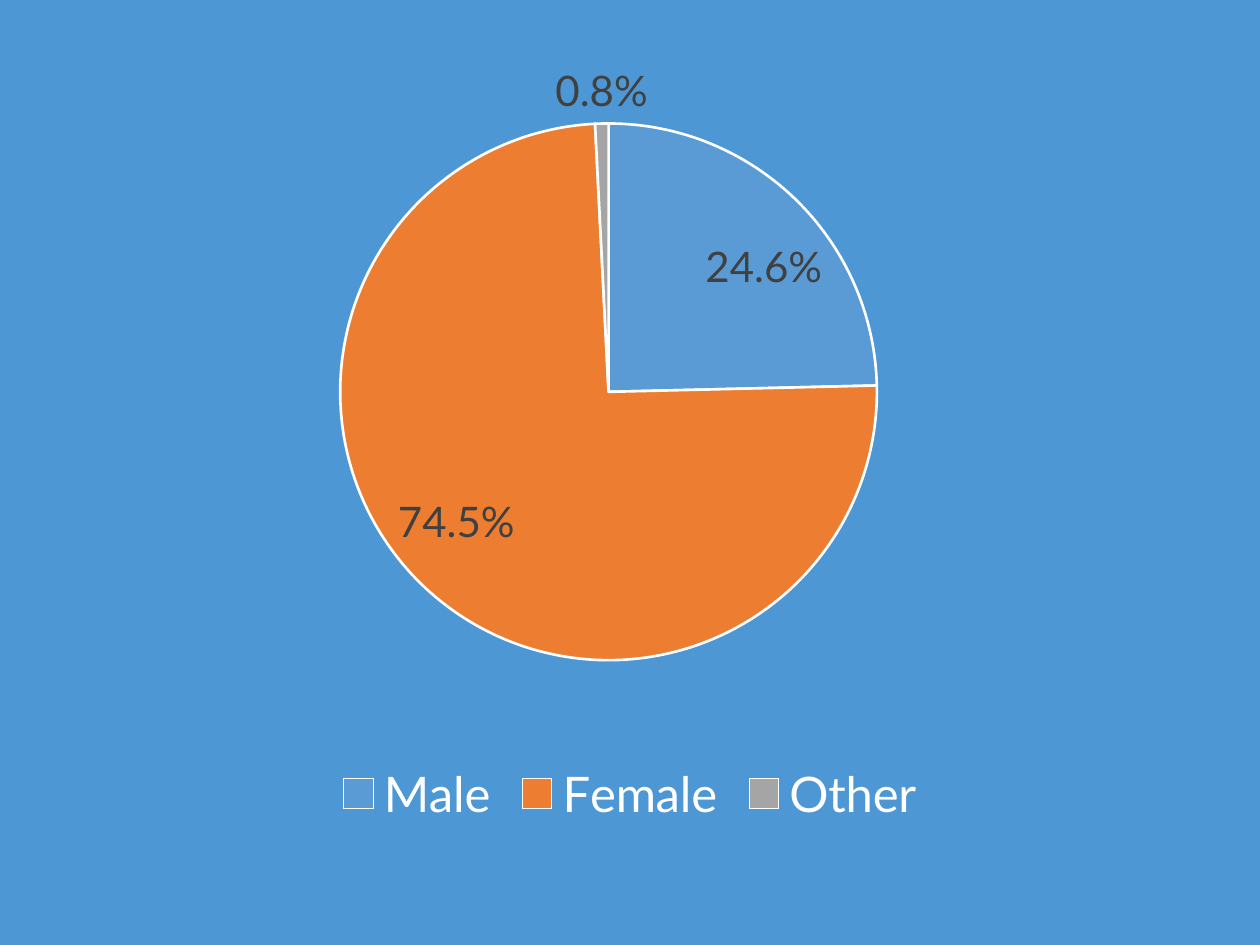
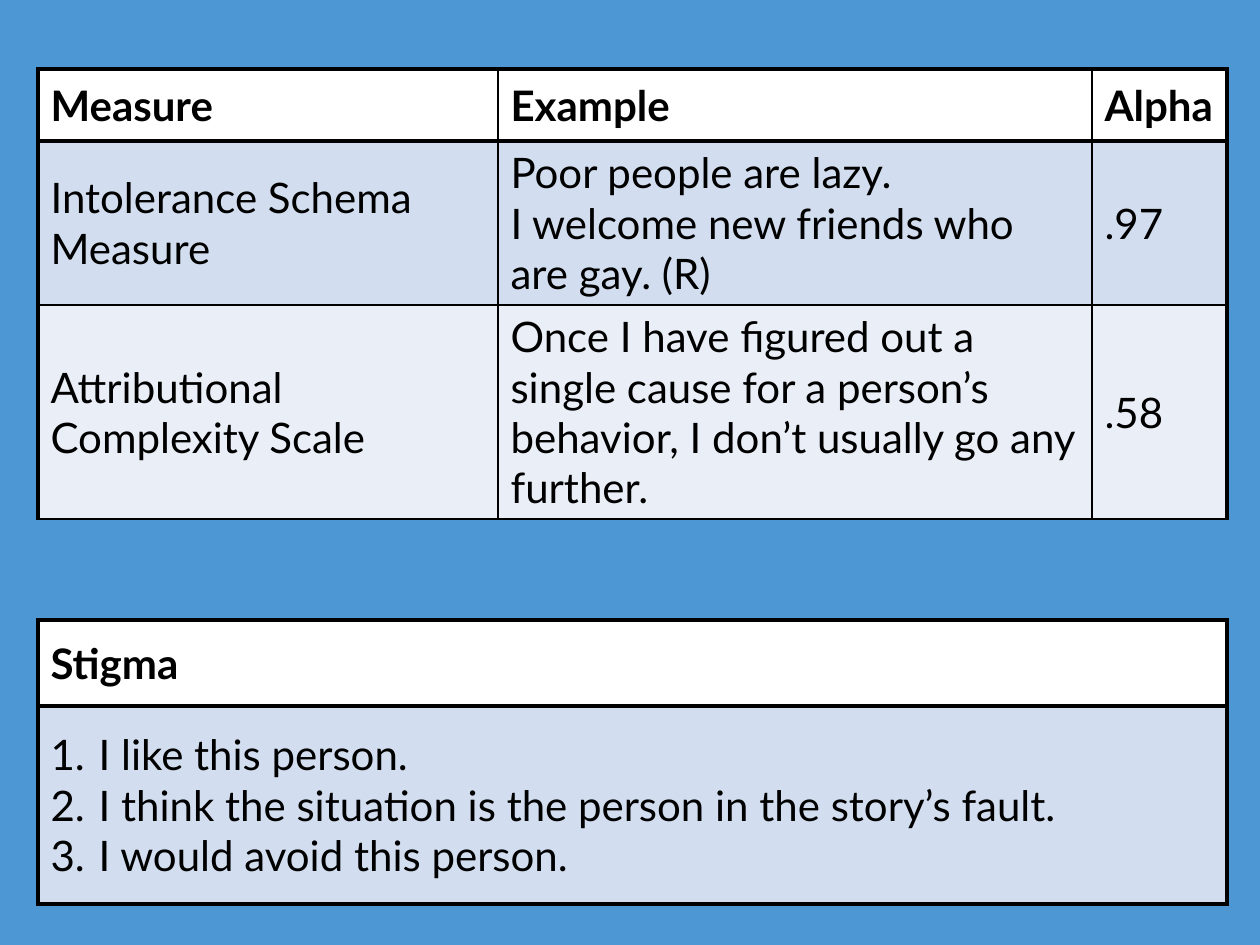
import lxml.etree
import pptx
import pptx.chart.data
import pptx.dml.color
import pptx.enum.chart
import pptx.enum.text
import pptx.oxml.ns
import pptx.util

PX = 914400 / 126
FONT = "Lato"
COLOURS = {
    "background": "4E97D5",
    "white": "FFFFFF",
    "black": "000000",
    "label": "404040",
    "male": "5B9BD5",
    "female": "ED7D31",
    "other": "A5A5A5",
    "band": "D2DEEF",
    "light band": "EAEFF7",
}
THICK, THIN = 2.25, 1


def px(length):
    return pptx.util.Emu(round(length * PX))


def style_font(font, size, colour, bold=False):
    font.name = FONT
    font.size = pptx.util.Pt(size)
    font.bold = bold
    font.color.rgb = pptx.dml.color.RGBColor.from_string(COLOURS[colour])


presentation = pptx.Presentation()
presentation.slide_width, presentation.slide_height = px(1260), px(945)
background = presentation.slide_master.background.fill
background.solid()
background.fore_color.rgb = pptx.dml.color.RGBColor.from_string(COLOURS["background"])
blank = presentation.slide_layouts[6]

gender_slide = presentation.slides.add_slide(blank)
genders = pptx.chart.data.CategoryChartData(number_format='0.0"%"')
genders.categories = ["Male", "Female", "Other"]
genders.add_series("Series 1", [24.6, 74.5, 0.8])
gender_pie = gender_slide.shapes.add_chart(
    pptx.enum.chart.XL_CHART_TYPE.PIE, 0, 0, px(1260), px(833), genders
).chart
gender_pie.has_title = False
style_font(gender_pie.font, 10, "black")

gender_pie.has_legend = True
gender_pie.legend.position = pptx.enum.chart.XL_LEGEND_POSITION.BOTTOM
gender_pie.legend.include_in_layout = False
style_font(gender_pie.legend.font, 28, "white")

pie_plot = gender_pie.plots[0]
pie_plot.vary_by_categories = True
for index, gender in enumerate(["male", "female", "other"]):
    wedge = pie_plot.series[0].points[index].format
    wedge.fill.solid()
    wedge.fill.fore_color.rgb = pptx.dml.color.RGBColor.from_string(COLOURS[gender])
    wedge.line.width = pptx.util.Pt(1.5)
    wedge.line.color.rgb = pptx.dml.color.RGBColor.from_string(COLOURS["white"])

pie_plot.has_data_labels = True
shares = pie_plot.data_labels
shares.show_value = True
shares.show_percentage = False
shares.number_format = '0.0"%"'
shares.number_format_is_linked = False
shares.position = pptx.enum.chart.XL_LABEL_POSITION.BEST_FIT
style_font(shares.font, 24, "label")

plot_area = gender_pie._chartSpace.chart.plotArea
for old_layout in plot_area.findall(pptx.oxml.ns.qn("c:layout")):
    plot_area.remove(old_layout)
layout = lxml.etree.Element(pptx.oxml.ns.qn("c:layout"))
plot_area.insert(0, layout)
manual = lxml.etree.SubElement(layout, pptx.oxml.ns.qn("c:manualLayout"))
for tag, value in [
    ("layoutTarget", "inner"), ("xMode", "edge"), ("yMode", "edge"),
    ("x", "0.27"), ("y", "0.085"), ("w", "0.426"), ("h", "0.771"),
]:
    lxml.etree.SubElement(manual, pptx.oxml.ns.qn(f"c:{tag}"), val=value)

measures_slide = presentation.slides.add_slide(blank)
measures = {
    "top": 69,
    "widths": [460, 594, 135],
    "heights": [72, 164, 214],
    "uprights": [THICK, THIN, THIN, THICK],
    "rules": [THICK, THICK, THIN, THIN],
    "numbered": False,
    "rows": [
        ["Measure", "Example", "Alpha"],
        [
            "Intolerance Schema Measure",
            "Poor people are lazy.\nI welcome new friends who are gay. (R)",
            ".97",
        ],
        [
            "Attributional Complexity Scale",
            "Once I have figured out a single cause for a person’s behavior, "
            "I don’t usually go any further.",
            ".58",
        ],
    ],
}
stigma = {
    "top": 620,
    "widths": [1189],
    "heights": [86, 198],
    "uprights": [THICK, THICK],
    "rules": [THICK, THICK, THICK],
    "numbered": True,
    "rows": [
        ["Stigma"],
        [
            "I like this person.\n"
            "I think the situation is the person in the story’s fault.\n"
            "I would avoid this person."
        ],
    ],
}
row_fills = ["white", "band", "light band"]

for content in [measures, stigma]:
    widths, heights = content["widths"], content["heights"]
    table = measures_slide.shapes.add_table(
        len(heights), len(widths), px(38), px(content["top"]), px(sum(widths)), px(sum(heights))
    ).table
    for column, width in zip(table.columns, widths):
        column.width = px(width)
    for row, height in zip(table.rows, heights):
        row.height = px(height)

    for r, texts in enumerate(content["rows"]):
        for c, text in enumerate(texts):
            cell = table.cell(r, c)
            cell.text_frame.text = text
            cell.vertical_anchor = pptx.enum.text.MSO_ANCHOR.MIDDLE
            cell.fill.solid()
            cell.fill.fore_color.rgb = pptx.dml.color.RGBColor.from_string(COLOURS[row_fills[r]])
            for paragraph in cell.text_frame.paragraphs:
                if content["numbered"] and r > 0:
                    properties = paragraph._p.get_or_add_pPr()
                    properties.set("marL", str(px(48)))
                    properties.set("indent", str(px(-48)))
                    lxml.etree.SubElement(
                        properties, pptx.oxml.ns.qn("a:buAutoNum"), type="arabicPeriod"
                    )
                for run in paragraph.runs:
                    style_font(run.font, 24, "black", bold=r == 0)

            uprights, rules = content["uprights"], content["rules"]
            edges = [("L", uprights[c]), ("R", uprights[c + 1]), ("T", rules[r]), ("B", rules[r + 1])]
            cell_properties = cell._tc.get_or_add_tcPr()
            for order, (side, weight) in enumerate(edges):
                edge = lxml.etree.Element(
                    pptx.oxml.ns.qn(f"a:ln{side}"), w=str(pptx.util.Pt(weight))
                )
                ink = lxml.etree.SubElement(edge, pptx.oxml.ns.qn("a:solidFill"))
                lxml.etree.SubElement(ink, pptx.oxml.ns.qn("a:srgbClr"), val=COLOURS["black"])
                cell_properties.insert(order, edge)

presentation.save("out.pptx")
